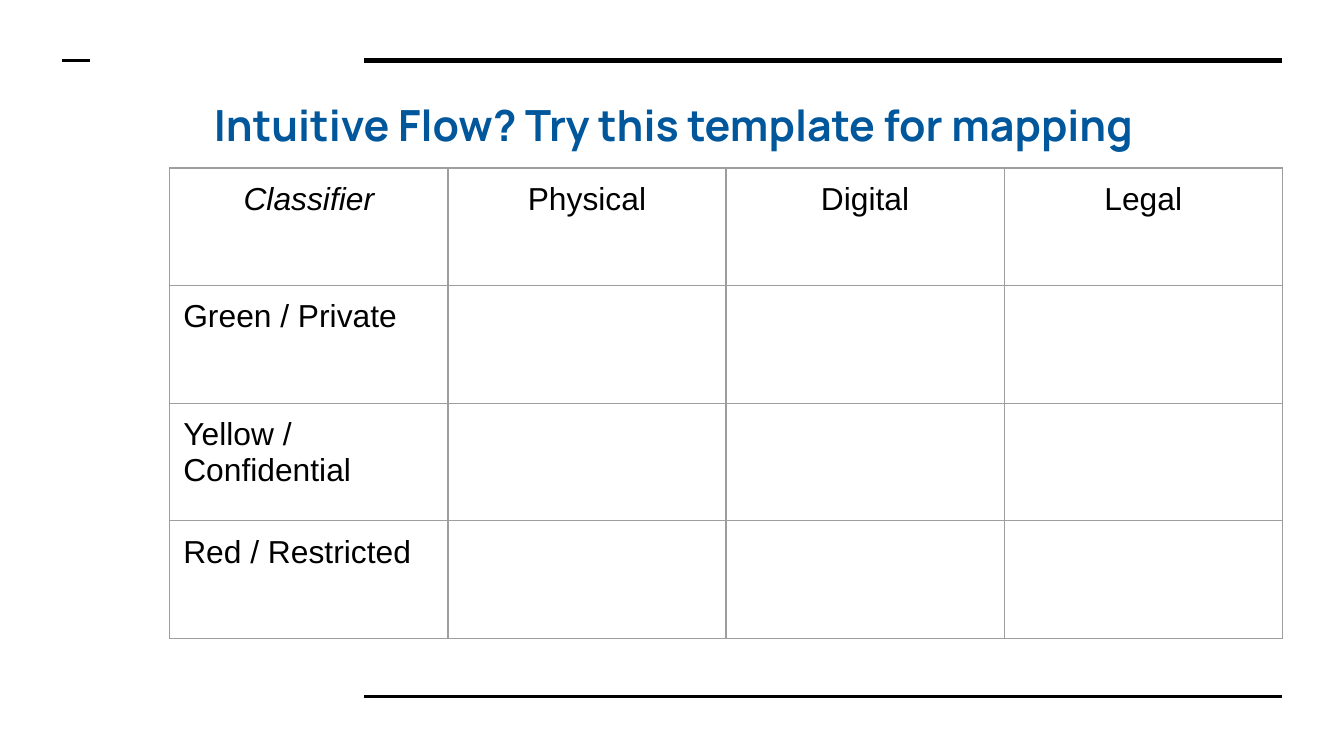
from lxml.etree import SubElement
from pptx import Presentation
from pptx.dml.color import RGBColor
from pptx.enum.shapes import MSO_CONNECTOR as Connector
from pptx.enum.text import MSO_ANCHOR as Anchor, PP_ALIGN as Align
from pptx.oxml.ns import qn
from pptx.util import Pt

BLACK = RGBColor(0x00, 0x00, 0x00)
BLUE = RGBColor(0x01, 0x57, 0x9B)
GREY = RGBColor(0x9E, 0x9E, 0x9E)
MARGIN = Pt(7.2)

deck = Presentation()
deck.slide_width, deck.slide_height = Pt(720), Pt(405)
page = deck.slides.add_slide(deck.slide_layouts[6])

rules = [(195, 687, 32.5, 3), (195, 687, 373, 1.5), (33.5, 48, 32.5, 1.5)]
for left, right, y, weight in rules:
    rule = page.shapes.add_connector(Connector.STRAIGHT, Pt(left), Pt(y), Pt(right), Pt(y))
    rule.line.color.rgb = BLACK
    rule.line.width = Pt(weight)
    SubElement(rule._element.spPr, qn("a:effectLst"))

title_box = page.shapes.add_textbox(Pt(107.5), Pt(45.5), Pt(579.5), Pt(44.5))
frame = title_box.text_frame
frame.word_wrap = True
frame.vertical_anchor = Anchor.TOP
frame.margin_left = frame.margin_right = frame.margin_top = frame.margin_bottom = MARGIN
para = frame.paragraphs[0]
para.text = "Intuitive Flow? Try this template for mapping"
para.font.name = "Manrope"
para.font.size = Pt(23)
para.font.bold = True
para.font.color.rgb = BLUE

rows = [
    ["Classifier", "Physical", "Digital", "Legal"],
    ["Green / Private", "", "", ""],
    ["Yellow / Confidential", "", "", ""],
    ["Red / Restricted", "", "", ""],
]
table = page.shapes.add_table(4, 4, Pt(91), Pt(90), Pt(596), Pt(252)).table
table.first_row = table.horz_banding = False

for row_index, row in enumerate(rows):
    for column_index, text in enumerate(row):
        cell = table.cell(row_index, column_index)
        cell.margin_left = cell.margin_right = cell.margin_top = cell.margin_bottom = MARGIN
        para = cell.text_frame.paragraphs[0]
        para.text = text
        para.alignment = Align.CENTER if row_index == 0 else Align.LEFT
        para.font.name = "Arial"
        para.font.size = Pt(17)
        para.font.italic = text == "Classifier"
        para.font.color.rgb = BLACK
        properties = cell._tc.get_or_add_tcPr()
        for side in ("lnL", "lnR", "lnT", "lnB"):
            border = SubElement(properties, qn(f"a:{side}"), w=str(Pt(0.75)))
            fill = SubElement(border, qn("a:solidFill"))
            SubElement(fill, qn("a:srgbClr"), val=str(GREY))
        cell.fill.background()

deck.save("out.pptx")
